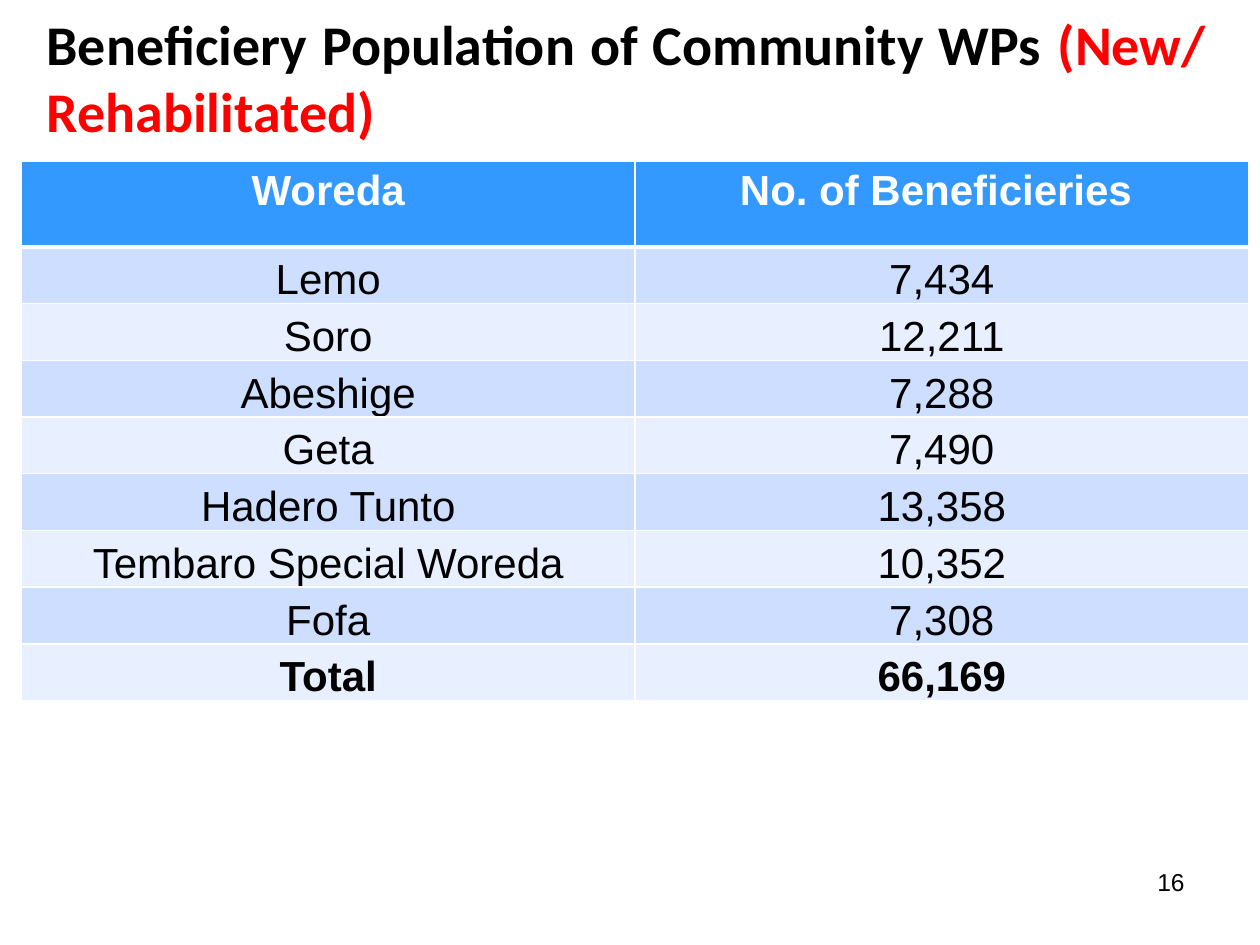
from lxml import etree
from pptx import Presentation
from pptx import util as u
from pptx.dml.color import RGBColor
from pptx.enum import text
from pptx.oxml.ns import qn

WIDTH, HEIGHT = 10, 7.5
BLACK, WHITE, RED = "000000", "FFFFFF", "FF0000"
HEADER_FILL, BAND_FILLS = "3399FF", ("CEDEFF", "E8EFFF")

TITLE = [("Beneficiery Population of Community WPs ", BLACK), ("(New/ Rehabilitated)", RED)]
ROWS = [
    ("Woreda", "No. of Beneficieries "),
    ("Lemo", "7,434"),
    ("Soro", "12,211"),
    ("Abeshige", "7,288"),
    ("Geta", "7,490"),
    ("Hadero Tunto", "13,358"),
    ("Tembaro Special Woreda", "10,352"),
    ("Fofa", "7,308"),
    ("Total", "66,169"),
]
PAGE_NUMBER = "16"
TABLE_LEFT, TABLE_TOP = 0.17, 1.28
COLUMN_WIDTH, HEADER_HEIGHT, ROW_HEIGHT = 4.87, 0.68, 0.45


def rgb(value):
    return RGBColor.from_string(value)


def add_text(paragraph, words, size=24, font="Arial", color=BLACK, bold=False,
             align=text.PP_ALIGN.CENTER):
    paragraph.alignment = align
    run = paragraph.add_run()
    run.text = words
    run.font.size = u.Pt(size)
    run.font.name = font
    run.font.bold = bold
    run.font.color.rgb = rgb(color)


def set_borders(cell, **widths):
    """Draw white borders, 1 point wide unless a side (L, R, T, B) says otherwise."""
    properties = cell._tc.get_or_add_tcPr()
    for index, side in enumerate("LRTB"):
        line = etree.Element(qn("a:ln" + side), w=str(u.Pt(widths.get(side, 1))))
        fill = etree.SubElement(line, qn("a:solidFill"))
        etree.SubElement(fill, qn("a:srgbClr"), val=WHITE)
        properties.insert(index, line)


def add_title(slide):
    title = slide.shapes.title
    title.left, title.top = u.Inches(0.27), u.Inches(0.09)
    title.width, title.height = u.Inches(9.4), u.Inches(1.03)
    frame = title.text_frame
    frame.auto_size = text.MSO_AUTO_SIZE.NONE
    frame.vertical_anchor = text.MSO_ANCHOR.MIDDLE
    for words, color in TITLE:
        add_text(frame.paragraphs[0], words, size=32, font="Calibri", color=color,
                 bold=True, align=text.PP_ALIGN.JUSTIFY)


def add_beneficiary_table(slide):
    columns = len(ROWS[0])
    heights = [HEADER_HEIGHT] + [ROW_HEIGHT] * (len(ROWS) - 1)
    table = slide.shapes.add_table(
        len(ROWS), columns, u.Inches(TABLE_LEFT), u.Inches(TABLE_TOP),
        u.Inches(COLUMN_WIDTH * columns), u.Inches(sum(heights))).table
    for column in table.columns:
        column.width = u.Inches(COLUMN_WIDTH)
    for index, values in enumerate(ROWS):
        table.rows[index].height = u.Inches(heights[index])
        header, total = index == 0, index == len(ROWS) - 1
        for cell, words in zip(table.rows[index].cells, values):
            cell.fill.solid()
            cell.fill.fore_color.rgb = rgb(HEADER_FILL if header else BAND_FILLS[(index - 1) % 2])
            set_borders(cell, B=3 if header else 1, T=3 if index == 1 else 1)
            if not header:
                cell.vertical_anchor = text.MSO_ANCHOR.BOTTOM
                cell.margin_left = cell.margin_right = cell.margin_top = u.Inches(0.01)
                cell.margin_bottom = 0
            add_text(cell.text_frame.paragraphs[0], words, bold=header or total,
                     color=WHITE if header else BLACK)


def add_page_number(slide):
    box = slide.shapes.add_textbox(u.Inches(7.17), u.Inches(6.83), u.Inches(2.33), u.Inches(0.52))
    box.text_frame.word_wrap = True
    add_text(box.text_frame.paragraphs[0], PAGE_NUMBER, size=14, align=text.PP_ALIGN.RIGHT)


def main():
    presentation = Presentation()
    presentation.slide_width, presentation.slide_height = u.Inches(WIDTH), u.Inches(HEIGHT)
    slide = presentation.slides.add_slide(presentation.slide_layouts[5])
    add_title(slide)
    add_beneficiary_table(slide)
    add_page_number(slide)
    presentation.save("out.pptx")


if __name__ == "__main__":
    main()
